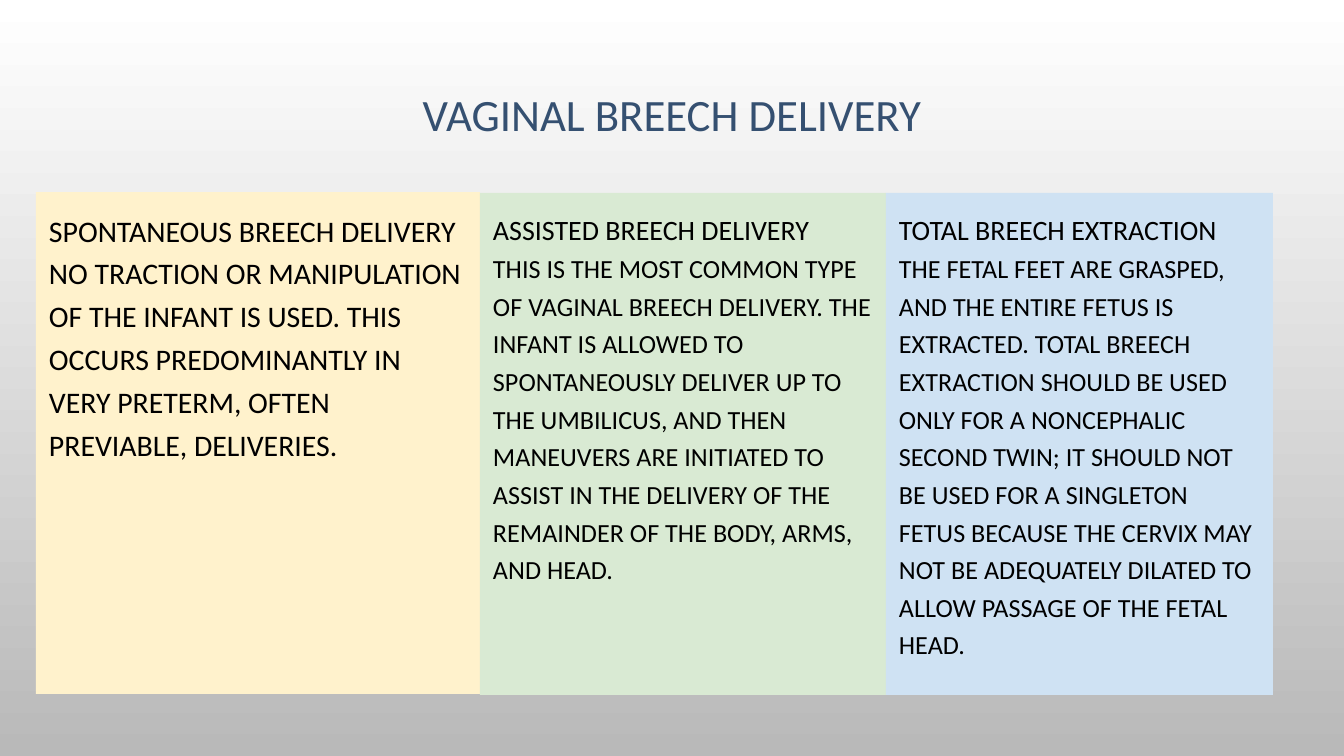
from pptx import Presentation
from pptx.dml.color import RGBColor
from pptx.enum.shapes import MSO_SHAPE
from pptx.enum.text import MSO_ANCHOR, MSO_AUTO_SIZE, PP_ALIGN
from pptx.util import Emu, Pt

FONT = "Calibri"
WHITE = RGBColor(0xFF, 0xFF, 0xFF)
GRAY = RGBColor(0xB9, 0xB9, 0xB9)
NAVY = RGBColor(0x35, 0x50, 0x71)
BLACK = RGBColor(0x00, 0x00, 0x00)
YELLOW = RGBColor(0xFF, 0xF2, 0xCC)
GREEN = RGBColor(0xD9, 0xEA, 0xD3)
BLUE = RGBColor(0xCF, 0xE2, 0xF3)

COLUMNS = [
    (444, 192, YELLOW, 16, 16, "SPONTANEOUS BREECH DELIVERY",
     "NO TRACTION OR MANIPULATION OF THE INFANT IS USED. THIS OCCURS "
     "PREDOMINANTLY IN VERY PRETERM, OFTEN PREVIABLE, DELIVERIES."),
    (406, 193, GREEN, 15, 14, "ASSISTED BREECH DELIVERY",
     "THIS IS THE MOST COMMON TYPE OF VAGINAL BREECH DELIVERY. THE INFANT IS "
     "ALLOWED TO SPONTANEOUSLY DELIVER UP TO THE UMBILICUS, AND THEN MANEUVERS "
     "ARE INITIATED TO ASSIST IN THE DELIVERY OF THE REMAINDER OF THE BODY, "
     "ARMS, AND HEAD."),
    (387, 193, BLUE, 15, 14, "TOTAL BREECH EXTRACTION",
     "THE FETAL FEET ARE GRASPED, AND THE ENTIRE FETUS IS EXTRACTED. TOTAL "
     "BREECH EXTRACTION SHOULD BE USED ONLY FOR A NONCEPHALIC SECOND TWIN; IT "
     "SHOULD NOT BE USED FOR A SINGLETON FETUS BECAUSE THE CERVIX MAY NOT BE "
     "ADEQUATELY DILATED TO ALLOW PASSAGE OF THE FETAL HEAD."),
]


def px(n):
    return Emu(round(n * 914400 / 134.4))


def set_frame(tf):
    tf.word_wrap = True
    tf.auto_size = MSO_AUTO_SIZE.NONE
    tf.vertical_anchor = MSO_ANCHOR.TOP
    tf.margin_left = tf.margin_right = px(13)
    tf.margin_top = tf.margin_bottom = px(13)


def format_paragraph(p, size, color, align, spacing):
    p.alignment = align
    p.line_spacing = spacing
    p.space_before = Pt(0)
    for r in p.runs:
        r.font.name = FONT
        r.font.size = Pt(size)
        r.font.color.rgb = color


def set_background(slide):
    fill = slide.background.fill
    fill.gradient()
    fill.gradient_angle = 270
    for stop, position, color in zip(fill.gradient_stops, (0, 1), (WHITE, GRAY)):
        stop.position = position
        stop.color.rgb = color


def add_title(slide, x, y, w, h):
    title = slide.shapes.title
    title.left, title.top, title.width, title.height = map(px, (x, y, w, h))
    tf = title.text_frame
    tf.text = "VAGINAL BREECH DELIVERY"
    set_frame(tf)
    format_paragraph(tf.paragraphs[0], 24, NAVY, PP_ALIGN.CENTER, 1.15)


def add_column(slide, x, y, w, h, fill, sizes, texts):
    sp = slide.shapes.add_shape(MSO_SHAPE.RECTANGLE, *map(px, (x, y, w, h)))
    sp.shadow.inherit = False
    sp.fill.solid()
    sp.fill.fore_color.rgb = fill
    sp.line.fill.background()
    tf = sp.text_frame
    tf.text = "\n".join(texts)
    set_frame(tf)
    for p, size in zip(tf.paragraphs, sizes):
        format_paragraph(p, size, BLACK, PP_ALIGN.LEFT, 1.2)


def add_columns(slide, x, h):
    for w, y, fill, head_size, body_size, head, body in COLUMNS:
        add_column(slide, x, y, w, h, fill, (head_size, body_size), (head, body))
        x += w


def main():
    prs = Presentation()
    prs.slide_width, prs.slide_height = px(1344), px(756)
    slide = prs.slides.add_slide(prs.slide_layouts[5])
    set_background(slide)
    add_title(slide, 46, 66, 1252, 85)
    add_columns(slide, 36, 502)
    prs.save("out.pptx")


if __name__ == "__main__":
    main()
